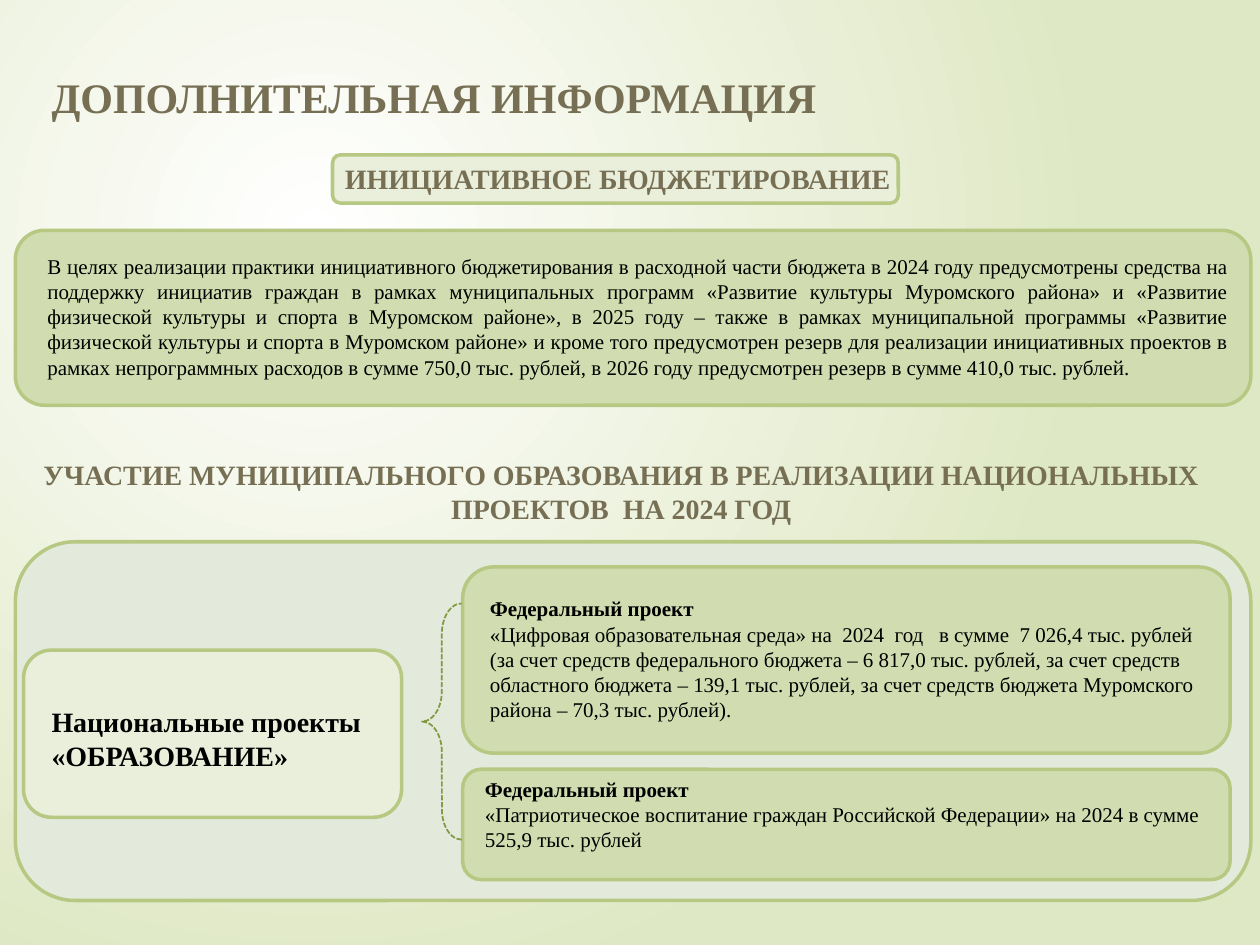
from dataclasses import dataclass

import lxml.etree
import pptx
import pptx.dml.color
import pptx.enum.dml
import pptx.enum.shapes
import pptx.enum.text
import pptx.oxml.ns
import pptx.util

Pt = pptx.util.Pt
Align = pptx.enum.text.PP_ALIGN
Anchor = pptx.enum.text.MSO_ANCHOR
Shape = pptx.enum.shapes.MSO_SHAPE

FONT = "Times New Roman"
COLORS = {
    "white": "FFFFFF",
    "backdrop": "DFE8C4",
    "outer": "E3E9DB",
    "card": "D1DDB0",
    "label": "EAEFDB",
    "border": "B6C882",
    "brace": "839943",
    "heading": "766F54",
    "body": "000000",
}


@dataclass
class Box:
    left: float
    top: float
    width: float
    height: float

    def lengths(self) -> tuple:
        return tuple(Pt(v) for v in (self.left, self.top, self.width, self.height))


@dataclass
class Panel:
    box: Box
    fill: str


@dataclass
class Line:
    text: str
    bold: bool = False


@dataclass
class Caption:
    box: Box
    lines: list[Line]
    size: float = 12
    color: str = "body"
    align: Align = Align.LEFT
    anchor: Anchor = Anchor.TOP


PANELS = [
    Panel(Box(8.8, 309.6, 706, 205), "outer"),
    Panel(Box(264.4, 324, 438.5, 106.4), "card"),
    Panel(Box(264.4, 439.6, 438.5, 63), "card"),
    Panel(Box(13.5, 371.5, 216, 95.5), "label"),
    Panel(Box(8.8, 131.6, 706, 100), "card"),
    Panel(Box(190, 88.5, 323.3, 27.6), "label"),
]
BRACE = Box(241.2, 344.8, 22.6, 135)

CAPTIONS = [
    Caption(Box(22.4, 37.4, 654.5, 36), [Line("ДОПОЛНИТЕЛЬНАЯ ИНФОРМАЦИЯ", True)],
            24, "heading"),
    Caption(Box(190, 88.5, 442, 39), [Line("ИНИЦИАТИВНОЕ БЮДЖЕТИРОВАНИЕ", True)],
            16, "heading", Align.JUSTIFY),
    Caption(Box(20, 141.2, 689.5, 80), [Line(
        "В целях реализации практики инициативного бюджетирования в расходной части "
        "бюджета в 2024 году предусмотрены средства на поддержку инициатив граждан в "
        "рамках муниципальных программ «Развитие культуры Муромского района» и «Развитие "
        "физической культуры и спорта в Муромском районе», в 2025 году – также в рамках "
        "муниципальной программы «Развитие физической культуры и спорта в Муромском "
        "районе» и кроме того предусмотрен резерв для реализации инициативных проектов в "
        "рамках непрограммных расходов в сумме 750,0 тыс. рублей, в 2026 году предусмотрен "
        "резерв в сумме 410,0 тыс. рублей.")], align=Align.JUSTIFY),
    Caption(Box(13.5, 264.4, 683, 33), [Line(
        "УЧАСТИЕ МУНИЦИПАЛЬНОГО ОБРАЗОВАНИЯ В РЕАЛИЗАЦИИ НАЦИОНАЛЬНЫХ "
        "ПРОЕКТОВ  НА 2024 ГОД", True)], 16, "heading", Align.CENTER, Anchor.MIDDLE),
    Caption(Box(22.4, 399, 224, 67.5),
            [Line("Национальные проекты", True), Line("«ОБРАЗОВАНИЕ»", True)], 16),
    Caption(Box(272.8, 337, 422, 80), [
        Line("Федеральный проект", True),
        Line("«Цифровая образовательная среда» на  2024  год   в сумме  7 026,4 тыс. рублей "
             "(за счет средств федерального бюджета – 6 817,0 тыс. рублей, за счет средств "
             "областного бюджета – 139,1 тыс. рублей, за счет средств бюджета Муромского "
             "района – 70,3 тыс. рублей)."),
    ]),
    Caption(Box(270, 440, 438.5, 75), [
        Line("Федеральный проект", True),
        Line("«Патриотическое воспитание граждан Российской Федерации» на 2024 в сумме "
             "525,9 тыс. рублей"),
    ]),
]


def rgb(name: str) -> pptx.dml.color.RGBColor:
    return pptx.dml.color.RGBColor.from_string(COLORS[name])


def paint_background(s) -> None:
    """Fill the slide with a radial gradient centred in its upper left quarter."""
    qn = pptx.oxml.ns.qn
    fill = s.background.fill
    fill.gradient()
    for stop, color in zip(fill.gradient_stops, ("white", "backdrop")):
        stop.color.rgb = rgb(color)
    grad = s._element.find(".//" + qn("a:gradFill"))
    lin = grad.find(qn("a:lin"))
    radial = lxml.etree.Element(qn("a:path"), path="circle")
    lxml.etree.SubElement(radial, qn("a:fillToRect"),
                          l="50000", t="50000", r="100000", b="100000")
    grad.replace(lin, radial)


def add_panel(s, panel: Panel) -> None:
    sp = s.shapes.add_shape(Shape.ROUNDED_RECTANGLE, *panel.box.lengths())
    sp.shadow.inherit = False
    sp.fill.solid()
    sp.fill.fore_color.rgb = rgb(panel.fill)
    sp.line.color.rgb = rgb("border")
    sp.line.width = Pt(2)


def add_brace(s, box: Box) -> None:
    sp = s.shapes.add_shape(Shape.LEFT_BRACE, *box.lengths())
    sp.shadow.inherit = False
    sp.adjustments[0] = 0.77
    sp.adjustments[1] = 0.5
    sp.fill.background()
    sp.line.color.rgb = rgb("brace")
    sp.line.width = Pt(1)
    sp.line.dash_style = pptx.enum.dml.MSO_LINE.SQUARE_DOT


def add_caption(s, caption: Caption) -> None:
    tf = s.shapes.add_textbox(*caption.box.lengths()).text_frame
    tf.word_wrap = True
    tf.vertical_anchor = caption.anchor
    for i, line in enumerate(caption.lines):
        p = tf.add_paragraph() if i else tf.paragraphs[0]
        p.alignment = caption.align
        r = p.add_run()
        r.text = line.text
        r.font.name = FONT
        r.font.size = Pt(caption.size)
        r.font.bold = line.bold
        r.font.color.rgb = rgb(caption.color)


def main() -> None:
    prs = pptx.Presentation()
    prs.slide_width, prs.slide_height = Pt(720), Pt(540)
    s = prs.slides.add_slide(prs.slide_layouts[6])
    paint_background(s)
    for panel in PANELS:
        add_panel(s, panel)
    add_brace(s, BRACE)
    for caption in CAPTIONS:
        add_caption(s, caption)
    prs.save("out.pptx")


if __name__ == "__main__":
    main()
